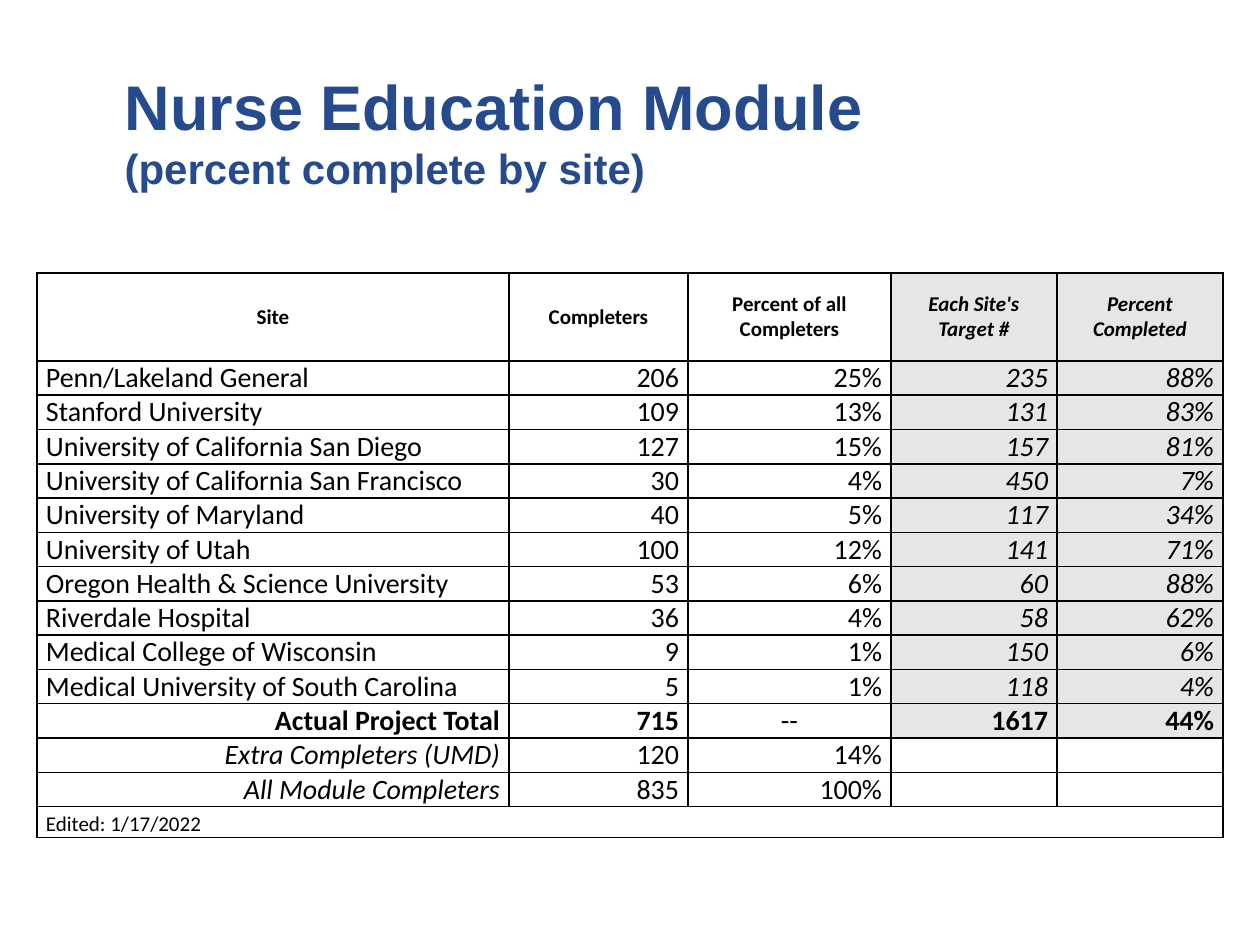
from lxml import etree
from pptx import Presentation
from pptx.dml.color import RGBColor
from pptx.enum.text import MSO_ANCHOR, PP_ALIGN
from pptx.oxml.ns import qn
from pptx.util import Emu, Pt

LEFT, CENTER, RIGHT = PP_ALIGN.LEFT, PP_ALIGN.CENTER, PP_ALIGN.RIGHT
TOP, MIDDLE, BOTTOM = MSO_ANCHOR.TOP, MSO_ANCHOR.MIDDLE, MSO_ANCHOR.BOTTOM
PX = 914400 // 126
BLACK, WHITE, GRAY, BLUE = "000000", "FFFFFF", "E7E6E6", "254B8E"

TITLE = [("Nurse Education Module", 36), ("(percent complete by site)", 24)]
HEADER = ["Site", "Completers", "Percent of all Completers",
          "Each Site's Target #", "Percent Completed"]
SITES = [
    ["Penn/Lakeland General", "206", "25%", "235", "88%"],
    ["Stanford University", "109", "13%", "131", "83%"],
    ["University of California San Diego", "127", "15%", "157", "81%"],
    ["University of California San Francisco", "30", "4%", "450", "7%"],
    ["University of Maryland", "40", "5%", "117", "34%"],
    ["University of Utah", "100", "12%", "141", "71%"],
    ["Oregon Health & Science University", "53", "6%", "60", "88%"],
    ["Riverdale Hospital", "36", "4%", "58", "62%"],
    ["Medical College of Wisconsin", "9", "1%", "150", "6%"],
    ["Medical University of South Carolina", "5", "1%", "118", "4%"],
]
TOTAL = ["Actual Project Total", "715", "--", "1617", "44%"]
EXTRAS = [
    ["Extra Completers (UMD)", "120", "14%", "", ""],
    ["All Module Completers", "835", "100%", "", ""],
]
FOOTER = ["Edited: 1/17/2022", "", "", "", ""]
ROWS = ([("header", HEADER)] + [("site", row) for row in SITES]
        + [("total", TOTAL)] + [("extra", row) for row in EXTRAS]
        + [("footer", FOOTER)])

TABLE_LEFT, TABLE_TOP = 37, 273
COL_WIDTHS = [472, 179, 203, 166, 166]
ROW_HEIGHTS = {"header": 88, "footer": 31}
BODY_HEIGHT = 34
TARGET_COL = 3


def px(n):
    return Emu(n * PX)


def rgb(color):
    return RGBColor.from_string(color)


def add_run(p, text, size, font, color, bold=False, italic=False):
    r = p.add_run()
    r.text = text
    f = r.font
    f.size, f.name, f.bold, f.italic = Pt(size), font, bold, italic
    f.color.rgb = rgb(color)


def set_borders(cell):
    tc_pr = cell._tc.get_or_add_tcPr()
    for i, side in enumerate(("a:lnL", "a:lnR", "a:lnT", "a:lnB")):
        ln = etree.Element(qn(side), w=str(Pt(1)))
        fill = etree.SubElement(ln, qn("a:solidFill"))
        etree.SubElement(fill, qn("a:srgbClr"), val=BLACK)
        tc_pr.insert(i, ln)


def cell_style(kind, col, text):
    """Return alignment, bold and italic for a cell."""
    target = col >= TARGET_COL
    if kind == "header":
        return CENTER, True, target
    if kind == "site":
        return (RIGHT if col else LEFT), False, target
    if kind == "total":
        return (CENTER if text == "--" else RIGHT), text != "--", False
    if kind == "extra":
        return RIGHT, False, col == 0
    return LEFT, False, False


def fill_cell(cell, kind, col, text):
    align, bold, italic = cell_style(kind, col, text)
    shaded = col >= TARGET_COL and kind in ("header", "site", "total")
    size = 12 if kind in ("header", "footer") else 16
    cell.fill.solid()
    cell.fill.fore_color.rgb = rgb(GRAY if shaded else WHITE)
    cell.margin_left = cell.margin_right = px(9)
    cell.margin_top = cell.margin_bottom = 0
    cell.vertical_anchor = MIDDLE if kind == "header" else BOTTOM
    p = cell.text_frame.paragraphs[0]
    p.alignment = align
    if text:
        add_run(p, text, size, "Calibri", BLACK, bold, italic)
    else:
        etree.SubElement(p._p, qn("a:endParaRPr"), sz=str(size * 100))
    set_borders(cell)


prs = Presentation()
prs.slide_width, prs.slide_height = px(1260), px(945)
s = prs.slides.add_slide(prs.slide_layouts[5])

title = s.shapes.title
title.left, title.top, title.width, title.height = map(px, (112, 54, 1071, 158))
tf = title.text_frame
tf.word_wrap = True
tf.vertical_anchor = TOP
tf.margin_top = px(13)
p = tf.paragraphs[0]
p.alignment = LEFT
for i, (text, size) in enumerate(TITLE):
    if i:
        p.add_line_break()
    add_run(p, text, size, "Arial", BLUE, bold=True)

heights = [ROW_HEIGHTS.get(kind, BODY_HEIGHT) for kind, _ in ROWS]
table = s.shapes.add_table(
    len(ROWS), len(COL_WIDTHS), px(TABLE_LEFT), px(TABLE_TOP),
    px(sum(COL_WIDTHS)), px(sum(heights))).table
table.first_row = table.horz_banding = False
for column, width in zip(table.columns, COL_WIDTHS):
    column.width = px(width)
for i, (kind, texts) in enumerate(ROWS):
    table.rows[i].height = px(heights[i])
    for j, text in enumerate(texts):
        fill_cell(table.cell(i, j), kind, j, text)
last = len(ROWS) - 1
table.cell(last, 0).merge(table.cell(last, len(COL_WIDTHS) - 1))

prs.save("out.pptx")
